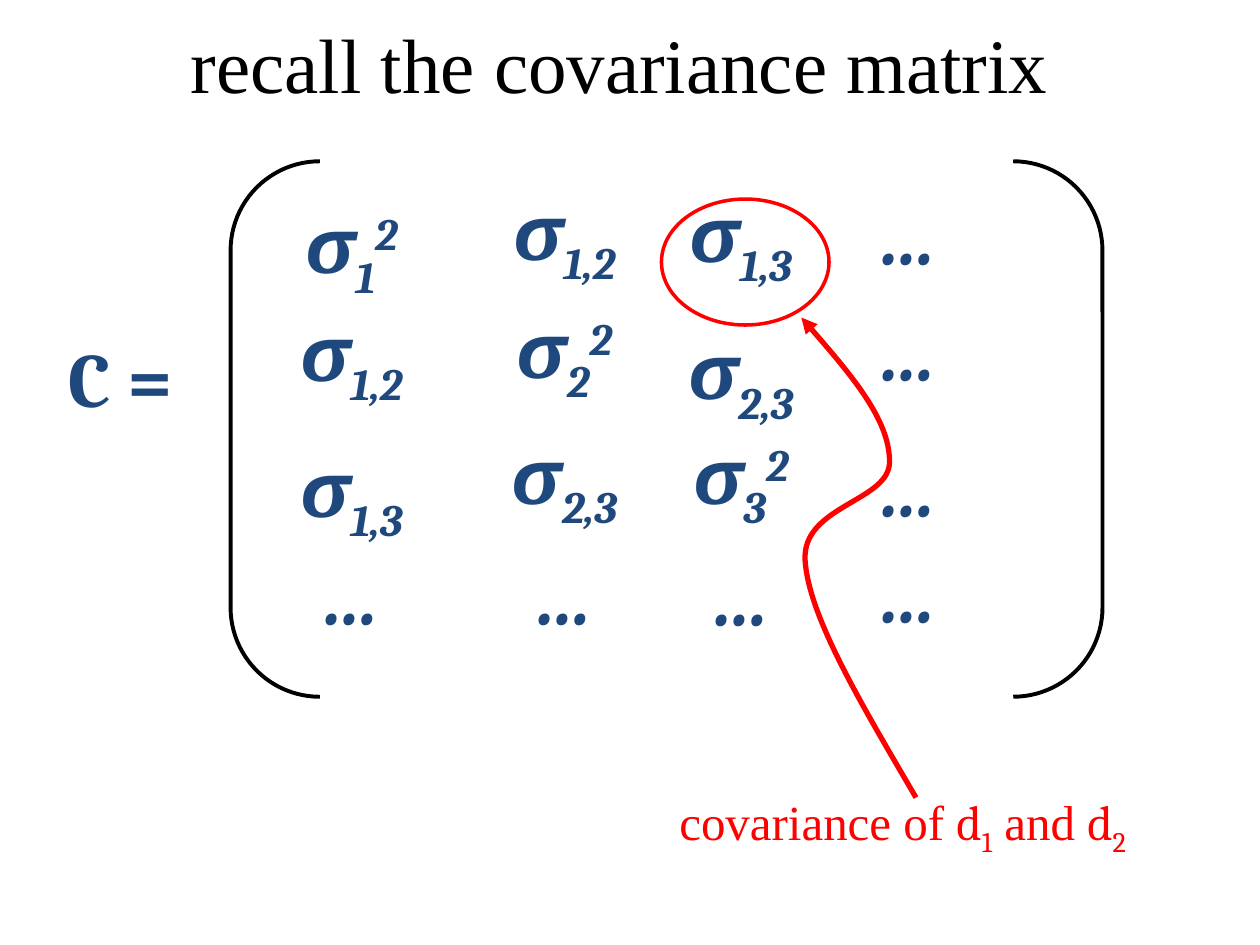
"""Build a slide that recalls the covariance matrix and marks one entry."""
import pptx
import pptx.util
import pptx.dml.color
import pptx.enum.shapes
import pptx.enum.text
import lxml.etree

INK = {"black": "000000", "blue": "1F497D", "red": "FF0000"}
SERIF, MATH = "Times New Roman", "Cambria"
SUB, SUP = -25, 30
WIDE, HIGH = 10, 7.5
CELL = (1.92, 0.92)

TITLE = [("recall the covariance matrix", 0, SERIF)]
NAME = [("C =", 0, MATH)]
NOTE = [("covariance of ", 0, SERIF), ("d", 0, MATH), ("1", SUB, MATH),
        (" and ", 0, SERIF), ("d", 0, MATH), ("2", SUB, MATH)]
COLS = [1.83, 3.52, 4.92, 6.25]
ROWS = [
    [("1", "2", 1.52), ("1,2", "", 1.41), ("1,3", "", 1.43), ("", "", 1.4)],
    [("1,2", "", 2.37), ("2", "2", 2.35), ("2,3", "", 2.52), ("", "", 2.32)],
    [("1,3", "", 3.45), ("2,3", "", 3.35), ("3", "2", 3.35), ("", "", 3.4)],
    [("", "", 4.26), ("", "", 4.26), ("", "", 4.27), ("", "", 4.24)],
]
CURVE = [(6.36, 2.52),
         (6.71, 2.92), (7.06, 3.33), (7.06, 3.66),
         (7.07, 3.98), (6.36, 4.01), (6.39, 4.45),
         (6.42, 4.9), (6.85, 5.61), (7.27, 6.33)]

inch = pptx.util.Inches
kinds = pptx.enum.shapes.MSO_SHAPE
deck = pptx.Presentation()
deck.slide_width, deck.slide_height = inch(WIDE), inch(HIGH)
slide = deck.slides.add_slide(deck.slide_layouts[6])


def color(name):
    return pptx.dml.color.RGBColor.from_string(INK[name])


def write(box, runs, size, ink, bold=False, slant=False):
    frame = slide.shapes.add_textbox(*map(inch, box)).text_frame
    frame.word_wrap = True
    frame.vertical_anchor = pptx.enum.text.MSO_ANCHOR.MIDDLE
    para = frame.paragraphs[0]
    para.alignment = pptx.enum.text.PP_ALIGN.CENTER
    font = para.font
    font.size, font.bold, font.italic = pptx.util.Pt(size), bold, slant
    font.color.rgb = color(ink)
    faces = {face for _, _, face in runs}
    if len(faces) == 1:
        font.name = faces.pop()
    for text, shift, face in runs:
        run = para.add_run()
        run.text = text
        if font.name is None:
            run.font.name = face
        if shift:
            run.font._element.set("baseline", str(shift * 1000))


def outline(shape, ink, width):
    shape.shadow.inherit = False
    shape.fill.background()
    shape.line.color.rgb = color(ink)
    shape.line.width = pptx.util.Pt(width)


def draw(kind, box, ink, width):
    outline(slide.shapes.add_shape(kind, *map(inch, box)), ink, width)


def bend(points, ink, width):
    spots = [(inch(x), inch(y)) for x, y in points]
    form = slide.shapes.build_freeform(*spots[0])
    form.add_line_segments(spots[1:], close=False)
    shape = form.convert_to_shape()
    outline(shape, ink, width)
    legs = shape._element.xpath(".//a:lnTo")
    for start in range(0, len(legs), 3):
        trio = legs[start:start + 3]
        curve = lxml.etree.Element(pptx.oxml.ns.qn("a:cubicBezTo"))
        trio[0].addprevious(curve)
        for leg in trio:
            curve.append(leg[0])
            leg.getparent().remove(leg)
    line = shape.line._get_or_add_ln()
    lxml.etree.SubElement(line, pptx.oxml.ns.qn("a:headEnd"), type="triangle")


def entry(sub, sup):
    parts = [("σ" if sub else "…", 0), (sub, SUB), (sup, SUP)]
    return [(text, shift, MATH) for text, shift in parts if text]


write((0.42, 0, 9, 1), TITLE, 44, "black")
draw(kinds.DOUBLE_BRACKET, (1.83, 1.28, 6.92, 4.25), "black", 2.25)
write((0, 2.53, *CELL), NAME, 44, "blue", bold=True)
for row in ROWS:
    for left, (sub, sup, top) in zip(COLS, row):
        write((left, top, *CELL), entry(sub, sup), 44, "blue", True, True)
draw(kinds.OVAL, (5.25, 1.58, 1.33, 1), "red", 2)
write((4.58, 6.17, 5.17, 0.75), NOTE, 28, "red")
bend(CURVE, "red", 3)
deck.save("out.pptx")
